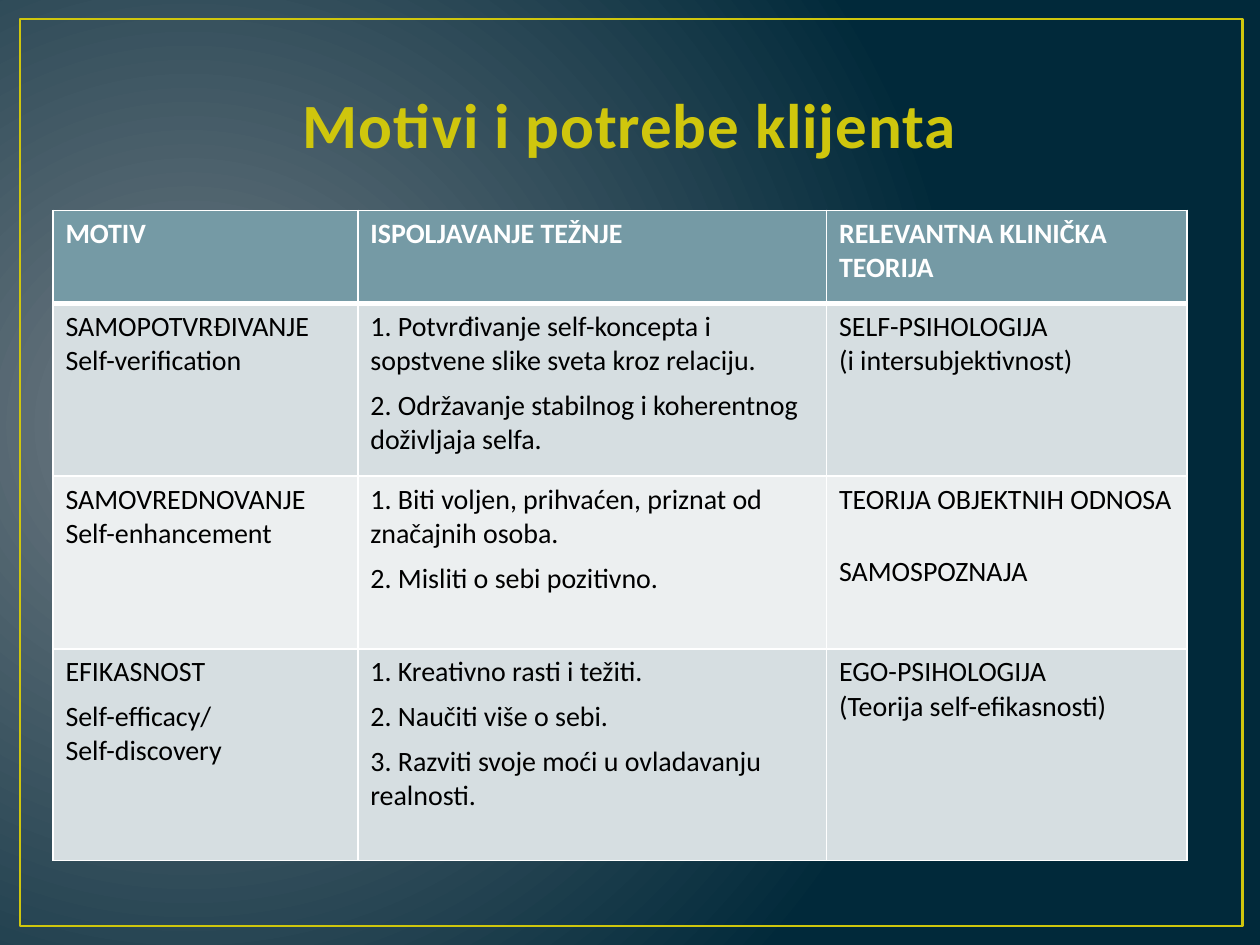
"""Build a slide with a table of client motives and needs."""
from dataclasses import dataclass

from pptx import Presentation
from pptx.dml.color import RGBColor
from pptx.enum.shapes import MSO_SHAPE
from pptx.enum.text import MSO_ANCHOR, PP_ALIGN
from pptx.oxml import parse_xml
from pptx.oxml.ns import nsdecls
from pptx.util import Inches, Pt

GOLD, WHITE, BLACK = "CFC60D", "FFFFFF", "000000"
HEADER, BAND_DARK, BAND_LIGHT = "759AA5", "D6DEE1", "ECEFF0"
COL_WIDTHS = [2.42, 3.72, 2.86]


@dataclass
class Row:
    height: float
    fill: str
    cells: list[list[str]]
    header: bool = False


ROWS = [
    Row(0.74, HEADER, [["MOTIV"], ["ISPOLJAVANJE TEŽNJE"], ["RELEVANTNA KLINIČKA TEORIJA"]], header=True),
    Row(1.37, BAND_DARK, [
        ["SAMOPOTVRĐIVANJE Self-verification"],
        ["1. Potvrđivanje self-koncepta i sopstvene slike sveta kroz relaciju.",
         "2. Održavanje stabilnog i koherentnog doživljaja selfa."],
        ["SELF-PSIHOLOGIJA \n(i intersubjektivnost)"],
    ]),
    Row(1.37, BAND_LIGHT, [
        ["SAMOVREDNOVANJE Self-enhancement"],
        ["1. Biti voljen, prihvaćen, priznat od značajnih osoba.",
         "2. Misliti o sebi pozitivno."],
        ["TEORIJA OBJEKTNIH ODNOSA \nSAMOSPOZNAJA"],
    ]),
    Row(1.68, BAND_DARK, [
        ["EFIKASNOST", "Self-efficacy/ \nSelf-discovery"],
        ["1. Kreativno rasti i težiti.", "2. Naučiti više o sebi.",
         "3. Razviti svoje moći u ovladavanju realnosti."],
        ["EGO-PSIHOLOGIJA \n(Teorija self-efikasnosti)"],
    ]),
]


def rgb(color: str) -> RGBColor:
    return RGBColor.from_string(color)


def write(tf, paragraphs: list[str], *, size: float, color: str, bold: bool = False,
          align=PP_ALIGN.LEFT, before: float = 0, spacing: float = 0) -> None:
    for i, text in enumerate(paragraphs):
        p = tf.paragraphs[0] if i == 0 else tf.add_paragraph()
        p.alignment = align
        p.space_before = Pt(before)
        for j, line in enumerate(text.split("\n")):
            if j:
                p.add_line_break()
            r = p.add_run()
            r.text = line
            r.font.name = "Calibri"
            r.font.size = Pt(size)
            r.font.bold = bold
            r.font.color.rgb = rgb(color)
            if spacing:
                r.font._element.set("spc", str(int(spacing * 100)))


def set_background(s) -> None:
    s._element.cSld.insert(0, parse_xml(
        f'<p:bg {nsdecls("p", "a")}><p:bgPr><a:gradFill rotWithShape="1"><a:gsLst>'
        '<a:gs pos="0"><a:srgbClr val="717C84"/></a:gs>'
        '<a:gs pos="100000"><a:srgbClr val="01293A"/></a:gs></a:gsLst>'
        '<a:path path="circle"><a:fillToRect l="15000" t="50000" r="85000" b="60000"/></a:path>'
        '</a:gradFill><a:effectLst/></p:bgPr></p:bg>'))


def set_borders(cell, bottom: float, top: float) -> None:
    tc_pr = cell._tc.get_or_add_tcPr()
    widths = {"lnL": 1, "lnR": 1, "lnT": top, "lnB": bottom}
    for i, (side, width) in enumerate(widths.items()):
        tc_pr.insert(i, parse_xml(
            f'<a:{side} {nsdecls("a")} w="{Pt(width)}"><a:solidFill>'
            f'<a:srgbClr val="{WHITE}"/></a:solidFill></a:{side}>'))


def add_frame(s) -> None:
    sp = s.shapes.add_shape(MSO_SHAPE.RECTANGLE, Inches(0.16), Inches(0.15), Inches(9.7), Inches(7.2))
    sp.shadow.inherit = False
    sp.fill.background()
    sp.line.color.rgb = rgb(GOLD)
    sp.line.width = Pt(1.5)


def add_title(s, text: str) -> None:
    tf = s.shapes.add_textbox(Inches(0.5), Inches(0.3), Inches(9), Inches(1.03)).text_frame
    tf.word_wrap = True
    tf.vertical_anchor = MSO_ANCHOR.BOTTOM
    write(tf, [text], size=36, color=GOLD, bold=True, align=PP_ALIGN.CENTER, spacing=0.5)


def add_motive_table(s) -> None:
    height = sum(row.height for row in ROWS)
    table = s.shapes.add_table(len(ROWS), len(COL_WIDTHS), Inches(0.42), Inches(1.67),
                               Inches(sum(COL_WIDTHS)), Inches(height)).table
    for column, width in zip(table.columns, COL_WIDTHS):
        column.width = Inches(width)
    for i, row in enumerate(ROWS):
        table.rows[i].height = Inches(row.height)
        for j, paragraphs in enumerate(row.cells):
            cell = table.cell(i, j)
            cell.fill.solid()
            cell.fill.fore_color.rgb = rgb(row.fill)
            set_borders(cell, bottom=3 if row.header else 1, top=3 if i == 1 else 1)
            write(cell.text_frame, paragraphs, size=16, color=WHITE if row.header else BLACK,
                  bold=row.header, before=0 if row.header else 6)


def main() -> None:
    prs = Presentation()
    prs.slide_width, prs.slide_height = Inches(10), Inches(7.5)
    s = prs.slides.add_slide(prs.slide_layouts[6])
    set_background(s)
    add_frame(s)
    add_title(s, "Motivi i potrebe klijenta")
    add_motive_table(s)
    prs.save("out.pptx")


if __name__ == "__main__":
    main()
